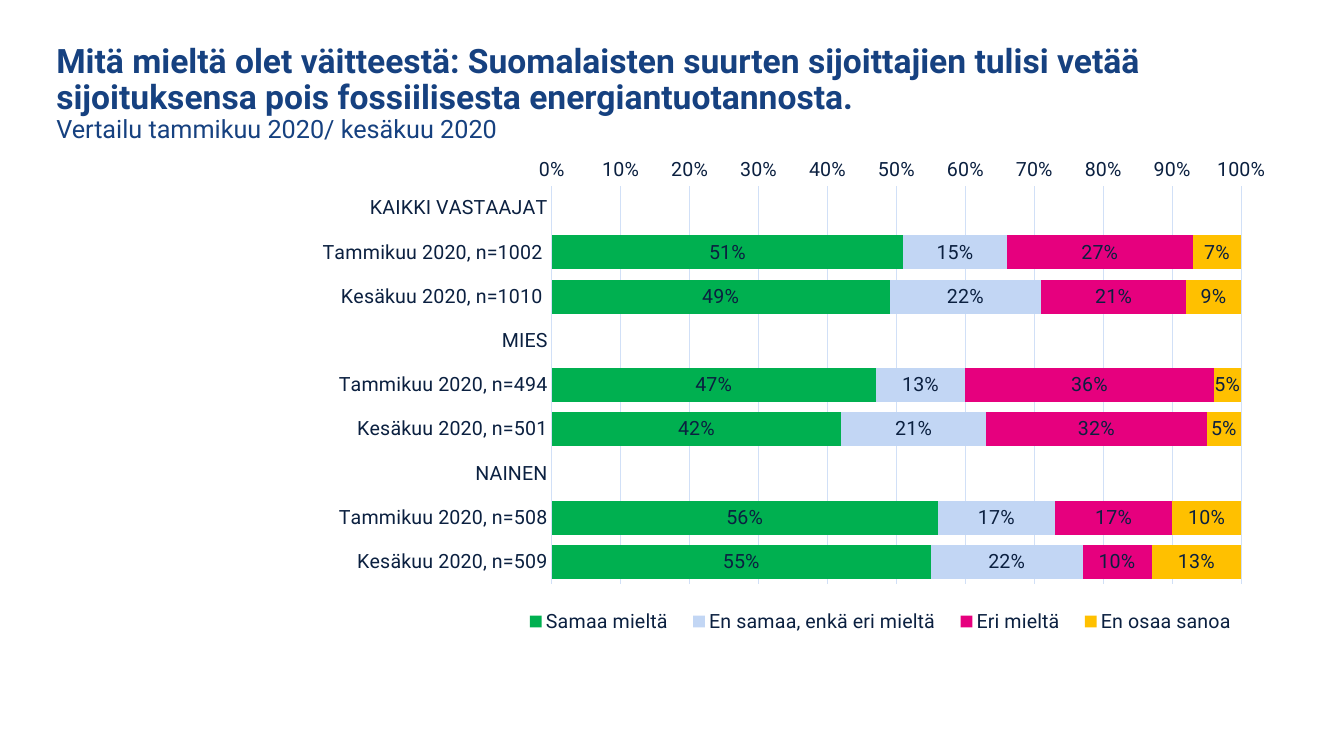
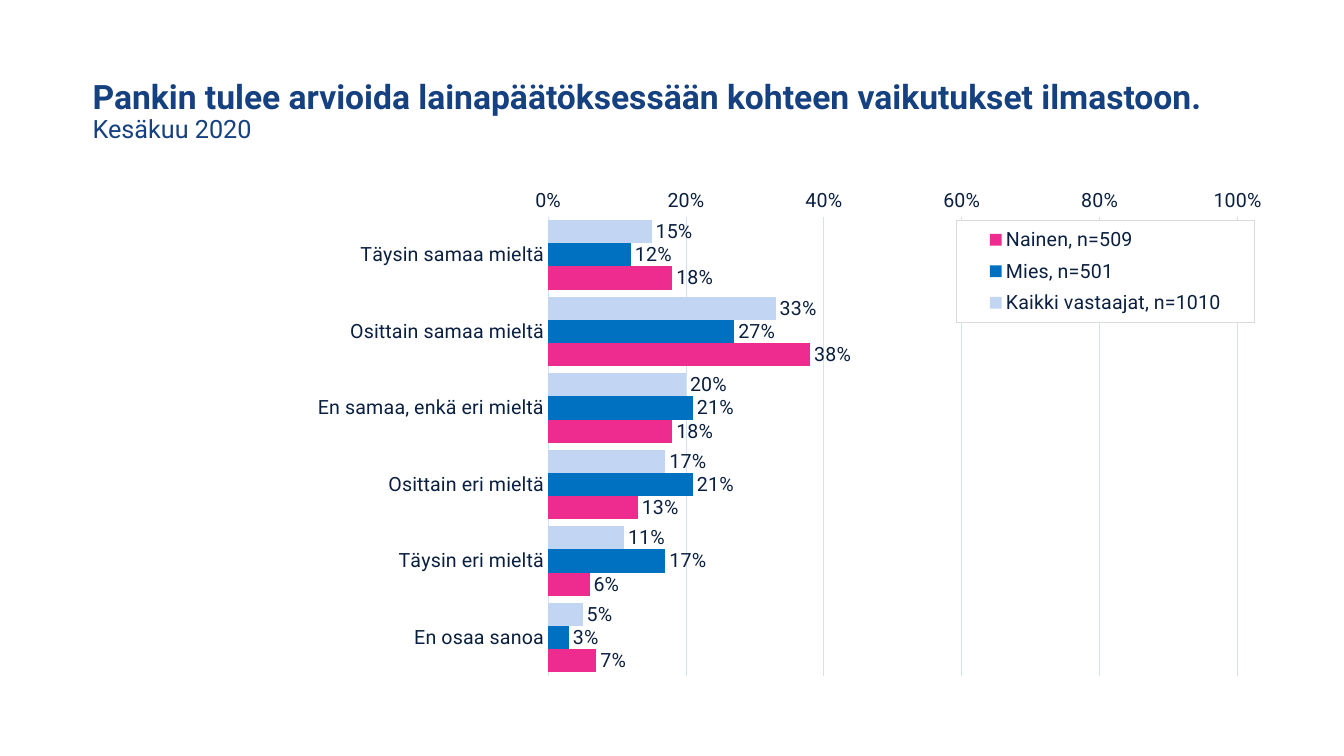
from pptx import Presentation
from pptx import util as u
from pptx.chart.data import CategoryChartData
from pptx.dml.color import RGBColor
from pptx.enum import chart as ch, text
from pptx.oxml import parse_xml
from pptx.oxml.ns import nsdecls, qn

# Shared style
PX = 9144  # EMU; 100 px to the inch
FONT = "Roboto"
NAVY = RGBColor(0x16, 0x41, 0x80)
INK = RGBColor(0x0B, 0x20, 0x40)
GRID = RGBColor(0xD1, 0xE0, 0xF7)
GREEN = RGBColor(0x00, 0xB0, 0x50)
PALE_BLUE = RGBColor(0xC2, 0xD6, 0xF4)
MAGENTA = RGBColor(0xE6, 0x00, 0x7E)
AMBER = RGBColor(0xFF, 0xC0, 0x00)
BLUE = RGBColor(0x00, 0x70, 0xC0)
PINK = RGBColor(0xEE, 0x2C, 0x90)

# Content: values are percentages; plot and legend are fractions of the chart
SLIDES = [
    {
        "title": "Mitä mieltä olet väitteestä: Suomalaisten suurten sijoittajien tulisi "
                 "vetää sijoituksensa pois fossiilisesta energiantuotannosta.",
        "subtitle": "Vertailu tammikuu 2020/ kesäkuu 2020",
        "title_box": (46, 21, 1211, 145),
        "chart_box": (82, 150, 1181, 549),
        "stacked": True,
        "major_unit": 0.1,
        "plot": (0.394, 0.063, 0.579, 0.719),
        "legend": (0.36, 0.82, 0.62, 0.06),
        "legend_boxed": False,
        "categories": [
            "KAIKKI VASTAAJAT", "Tammikuu 2020, n=1002 ", "Kesäkuu 2020, n=1010 ",
            "MIES", "Tammikuu 2020, n=494", "Kesäkuu 2020, n=501",
            "NAINEN", "Tammikuu 2020, n=508", "Kesäkuu 2020, n=509",
        ],
        "series": [
            ("Samaa mieltä", GREEN, (None, 51, 49, None, 47, 42, None, 56, 55)),
            ("En samaa, enkä eri mieltä", PALE_BLUE,
             (None, 15, 22, None, 13, 21, None, 17, 22)),
            ("Eri mieltä", MAGENTA, (None, 27, 21, None, 36, 32, None, 17, 10)),
            ("En osaa sanoa", AMBER, (None, 7, 9, None, 5, 5, None, 10, 13)),
        ],
    },
    {
        "title": "Pankin tulee arvioida lainapäätöksessään kohteen vaikutukset ilmastoon.",
        "subtitle": "Kesäkuu 2020",
        "title_box": (82, 39, 1211, 145),
        "chart_box": (82, 184, 1181, 516),
        "stacked": False,
        "major_unit": 0.2,
        "plot": (0.391, 0.06, 0.579, 0.883),
        "legend": (0.734, 0.067, 0.25, 0.196),
        "legend_boxed": True,
        "categories": [
            "Täysin samaa mieltä", "Osittain samaa mieltä", "En samaa, enkä eri mieltä",
            "Osittain eri mieltä", "Täysin eri mieltä", "En osaa sanoa",
        ],
        "series": [
            ("Kaikki vastaajat, n=1010", PALE_BLUE, (15, 33, 20, 17, 11, 5)),
            ("Mies, n=501", BLUE, (12, 27, 21, 21, 17, 3)),
            ("Nainen, n=509", PINK, (18, 38, 18, 13, 6, 7)),
        ],
    },
]


def emu(box):
    return [length * PX for length in box]


def set_font(font, size, color, bold=False):
    font.name, font.size, font.bold = FONT, u.Pt(size), bold
    font.color.rgb = color


def manual_layout(box, inner=False):
    """Chart layout element that fixes a part at fractions of the chart."""
    target = '<c:layoutTarget val="inner"/>' if inner else ""
    modes = '<c:xMode val="edge"/><c:yMode val="edge"/>'
    sizes = "".join(f'<c:{name} val="{value}"/>' for name, value in zip("xywh", box))
    return parse_xml(f'<c:layout {nsdecls("c")}><c:manualLayout>{target}{modes}{sizes}'
                     '</c:manualLayout></c:layout>')


def add_title(slide, content):
    frame = slide.shapes.add_textbox(*emu(content["title_box"])).text_frame
    frame.word_wrap = True
    frame.vertical_anchor = text.MSO_ANCHOR.MIDDLE
    paragraph = frame.paragraphs[0]
    paragraph.line_spacing = 0.9
    heading = paragraph.add_run()
    heading.text = content["title"]
    set_font(heading.font, 24, NAVY, bold=True)
    paragraph.add_line_break()
    subtitle = paragraph.add_run()
    subtitle.text = content["subtitle"]
    set_font(subtitle.font, 18, NAVY)


def style_axes(chart, major_unit):
    categories, values = chart.category_axis, chart.value_axis
    for axis in (categories, values):
        axis.major_tick_mark = axis.minor_tick_mark = ch.XL_TICK_MARK.NONE
        set_font(axis.tick_labels.font, 14, INK)
    categories.reverse_order = True
    categories.has_major_gridlines = False
    values.has_major_gridlines = True
    for line in (categories.format.line, values.major_gridlines.format.line):
        line.color.rgb, line.width = GRID, u.Pt(0.75)
    values.format.line.fill.background()
    values.minimum_scale, values.maximum_scale = 0, 1
    values.major_unit = major_unit
    values.tick_labels.number_format = "0%"
    values.tick_labels.number_format_is_linked = False


def style_legend(chart, box, boxed):
    chart.has_legend = True
    legend = chart.legend
    legend.position = ch.XL_LEGEND_POSITION.BOTTOM
    legend.include_in_layout = False
    set_font(legend.font, 14, INK)
    element = legend._element
    for old_layout in element.findall(qn("c:layout")):
        element.remove(old_layout)
    element.find(qn("c:legendPos")).addnext(manual_layout(box))
    if boxed:
        element.find(qn("c:overlay")).addnext(parse_xml(
            f'<c:spPr {nsdecls("c", "a")}>'
            '<a:solidFill><a:srgbClr val="FFFFFF"/></a:solidFill><a:ln w="9525">'
            '<a:solidFill><a:srgbClr val="D9D9D9"/></a:solidFill></a:ln></c:spPr>'))


def add_bar_chart(slide, content):
    stacked = content["stacked"]
    data = CategoryChartData(number_format="0%")
    data.categories = content["categories"]
    for name, _, percents in content["series"]:
        data.add_series(name, [None if p is None else p / 100 for p in percents])
    kind = ch.XL_CHART_TYPE.BAR_STACKED if stacked else ch.XL_CHART_TYPE.BAR_CLUSTERED
    chart = slide.shapes.add_chart(kind, *emu(content["chart_box"]), data).chart
    chart.has_title = False
    set_font(chart.font, 14, INK)

    # Bars and their labels
    plot = chart.plots[0]
    plot.vary_by_categories = False
    plot.gap_width = 30
    plot.overlap = 100 if stacked else 0
    position = ch.XL_LABEL_POSITION.CENTER if stacked else ch.XL_LABEL_POSITION.OUTSIDE_END
    for series, (_, color, _) in zip(plot.series, content["series"]):
        series.format.fill.solid()
        series.format.fill.fore_color.rgb = color
        series.invert_if_negative = False
        labels = series.data_labels
        labels.show_value = True
        labels.number_format, labels.number_format_is_linked = "0%", False
        labels.position = position
        set_font(labels.font, 14, INK)

    # Axes, legend and plot area
    style_axes(chart, content["major_unit"])
    style_legend(chart, content["legend"], content["legend_boxed"])
    plot_area = chart._chartSpace.find(".//" + qn("c:plotArea"))
    for old_layout in plot_area.findall(qn("c:layout")):
        plot_area.remove(old_layout)
    plot_area.insert(0, manual_layout(content["plot"], inner=True))


def main():
    presentation = Presentation()
    presentation.slide_width, presentation.slide_height = emu((1333, 750))
    for content in SLIDES:
        slide = presentation.slides.add_slide(presentation.slide_layouts[6])
        add_title(slide, content)
        add_bar_chart(slide, content)
    presentation.save("out.pptx")


if __name__ == "__main__":
    main()
